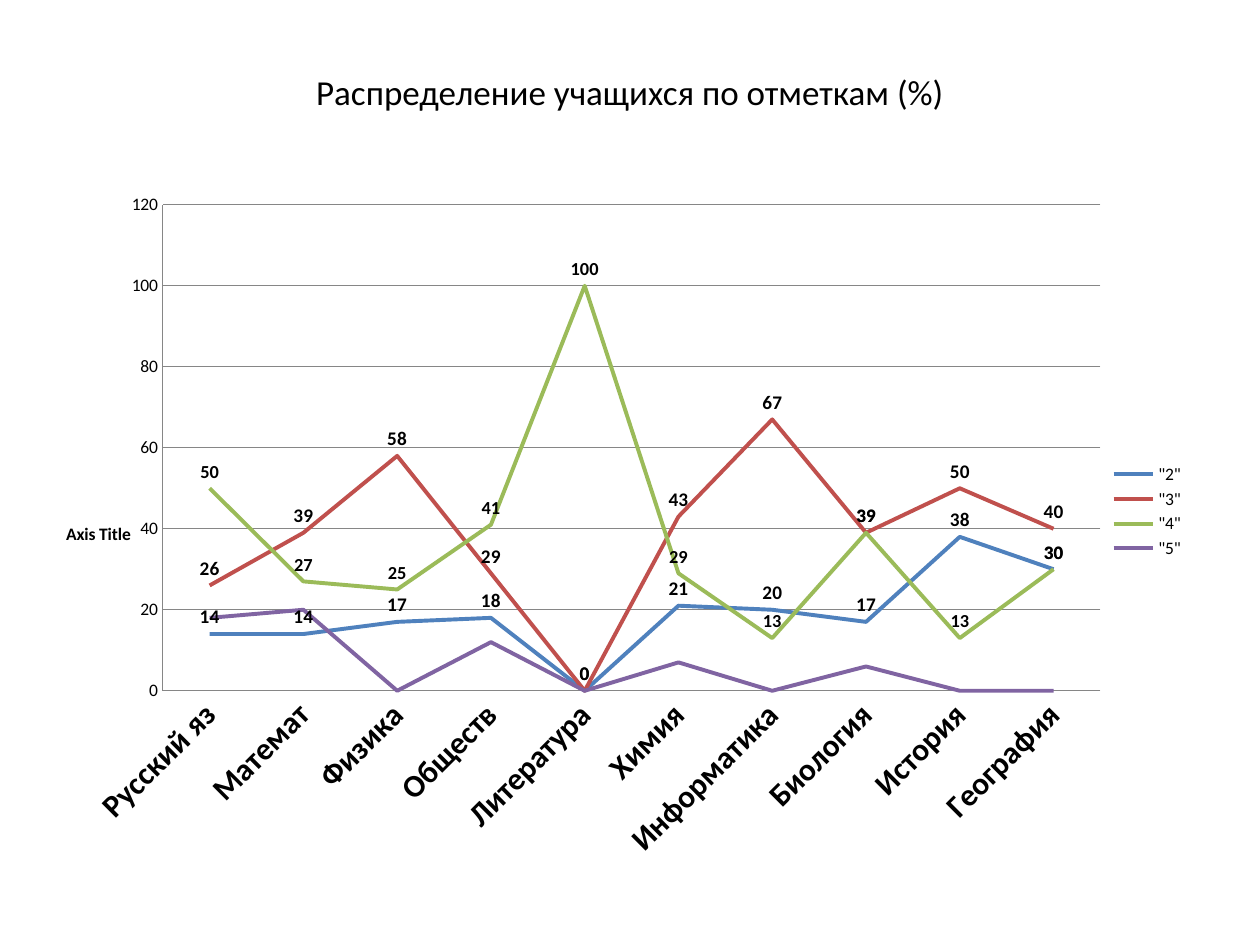
from lxml import etree
from pptx import Presentation
from pptx.chart.data import CategoryChartData
from pptx.dml.color import RGBColor
from pptx.enum import chart as ch, text
from pptx.oxml.ns import qn
from pptx.util import Pt

# Content
TITLE = "Распределение учащихся по отметкам (%)"
AXIS_TITLE = "Axis Title"
SUBJECTS = ["Русский яз", "Математ", "Физика", "Обществ", "Литература",
            "Химия", "Информатика", "Биология", "История", "География"]
# mark, percentages, line colour, label size (None = no labels)
MARKS = [
    ('"2"', [14, 14, 17, 18, 0, 21, 20, 17, 38, 30], "4F81BD", 11),
    ('"3"', [26, 39, 58, 29, 0, 43, 67, 39, 50, 40], "C0504D", 11),
    ('"4"', [50, 27, 25, 41, 100, 29, 13, 39, 13, 30], "9BBB59", 10.5),
    ('"5"', [18, 20, 0, 12, 0, 7, 0, 6, 0, 0], "8064A2", None),
]
FONT, BLACK, GREY = "Calibri", "000000", "868686"
MARGIN, WIDTH = 36, 648


def rgb(value):
    return RGBColor.from_string(value)


def style(font, size, bold=False):
    font.name, font.size, font.bold = FONT, Pt(size), bold
    font.color.rgb = rgb(BLACK)


def place(parent, index, **values):
    """Give a chart part a manual layout, in fractions of the chart."""
    old = parent.find(qn("c:layout"))
    if old is not None:
        parent.remove(old)
    layout = etree.Element(qn("c:layout"))
    parent.insert(index, layout)
    manual = etree.SubElement(layout, qn("c:manualLayout"))
    for tag, value in values.items():
        etree.SubElement(manual, qn("c:" + tag)).set("val", str(value))


prs = Presentation()
prs.slide_width, prs.slide_height = Pt(720), Pt(540)
s = prs.slides.add_slide(prs.slide_layouts[5])

# Title
title = s.shapes.title
title.left, title.top, title.width, title.height = (
    Pt(MARGIN), Pt(21.6), Pt(WIDTH), Pt(61.2))
tf = title.text_frame
tf.vertical_anchor = text.MSO_ANCHOR.MIDDLE
p = tf.paragraphs[0]
p.alignment = text.PP_ALIGN.CENTER
r = p.add_run()
r.text = TITLE
style(r.font, 20)

# Chart
data = CategoryChartData()
data.categories = SUBJECTS
for name, values, _, _ in MARKS:
    data.add_series(name, values)
chart = s.shapes.add_chart(ch.XL_CHART_TYPE.LINE, Pt(MARGIN), Pt(77),
                           Pt(WIDTH), Pt(430.6), data).chart
chart.has_title = False
style(chart.font, 10)
chart.has_legend = True
chart.legend.position = ch.XL_LEGEND_POSITION.RIGHT
chart.legend.include_in_layout = False
chart.plots[0].vary_by_categories = False
plot_area = chart.plots[0]._element.getparent()
place(plot_area, 0, layoutTarget="inner", xMode="edge", yMode="edge",
      x=0.088, y=0.093, w=0.827, h=0.645)

# Lines and their labels
for series, (_, _, color, size) in zip(chart.plots[0].series, MARKS):
    series.smooth = False
    series.marker.style = ch.XL_MARKER_STYLE.NONE
    series.format.line.color.rgb = rgb(color)
    series.format.line.width = Pt(2.25)
    if size:
        labels = series.data_labels
        labels.show_value = True
        labels.position = ch.XL_LABEL_POSITION.ABOVE
        style(labels.font, size, True)

# Axes
subjects, percent = chart.category_axis, chart.value_axis
for axis, size, bold in ((subjects, 18, True), (percent, 10, False)):
    axis.major_tick_mark = axis.minor_tick_mark = ch.XL_TICK_MARK.NONE
    axis.format.line.color.rgb = rgb(GREY)
    style(axis.tick_labels.font, size, bold)
subjects._element.find(qn("c:txPr")).find(qn("a:bodyPr")).set("rot", "-2700000")
percent.minimum_scale, percent.maximum_scale, percent.major_unit = 0, 120, 20
percent.has_major_gridlines = True
percent.major_gridlines.format.line.color.rgb = rgb(GREY)

# Value axis title, set level
tf = percent.axis_title.text_frame
r = tf.paragraphs[0].add_run()
r.text = AXIS_TITLE
style(r.font, 10, True)
body = tf._txBody.find(qn("a:bodyPr"))
body.set("rot", "0")
body.set("vert", "horz")
place(percent.axis_title._element, 1, xMode="edge", yMode="edge", x=0, y=0.51)

prs.save("out.pptx")
